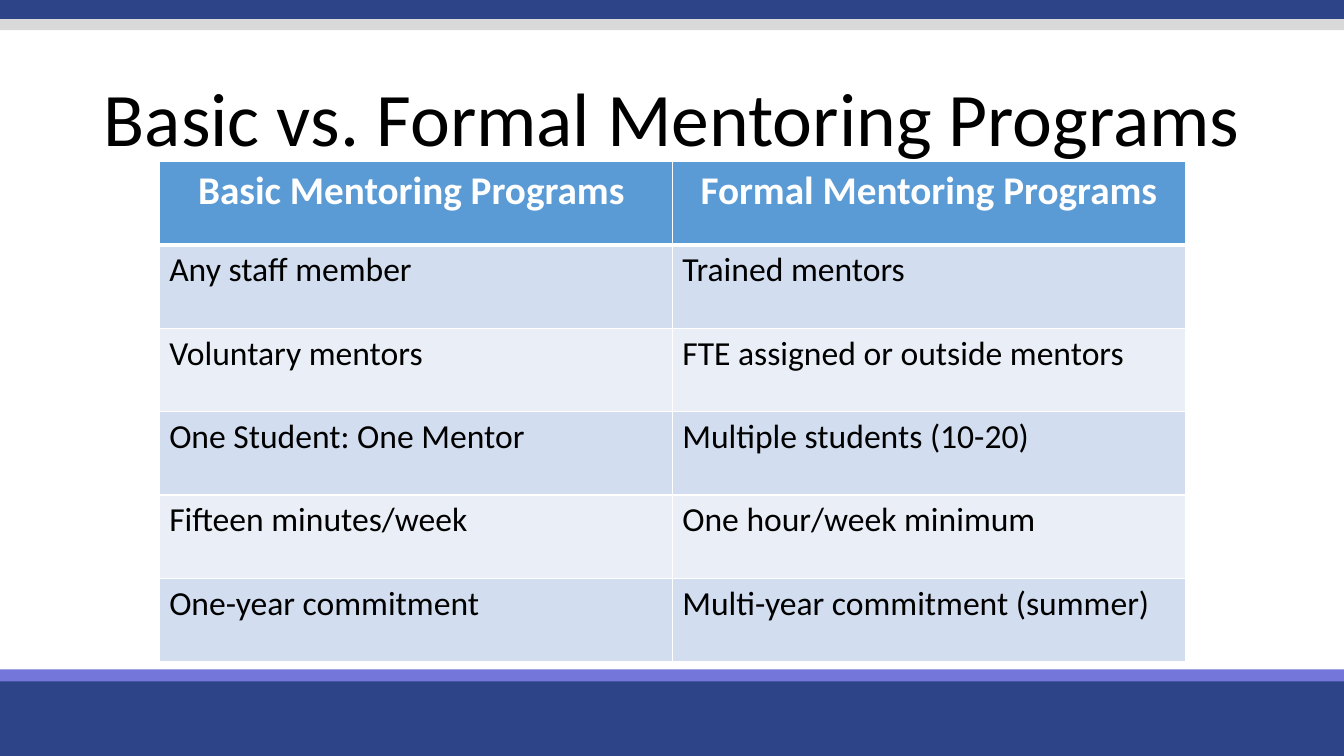
from pptx import Presentation
from pptx.dml.color import RGBColor as RGB
from pptx.enum.shapes import MSO_SHAPE as Shape
from pptx.enum.text import MSO_ANCHOR as Anchor, MSO_AUTO_SIZE as Auto, PP_ALIGN as Align
from pptx.oxml import parse_xml
from pptx.oxml.ns import nsdecls
from pptx.util import Pt

WIDE, HIGH = 960, 540
HUES = {
    "navy": "2E4488", "violet": "7476DA", "gray": "D9D9D9",
    "head": "5B9BD5", "dark": "D2DEEF", "light": "EAEFF7",
    "white": "FFFFFF", "black": "000000",
}
BARS = [
    (482.4, 57.6, "navy"),
    (478.1, 8.6, "violet"),
    (-2.2, 15.9, "navy"),
    (13.7, 7.9, "gray"),
]
ROWS = [
    ("Basic Mentoring Programs ", "Formal Mentoring Programs"),
    ("Any staff member", "Trained mentors"),
    ("Voluntary mentors", "FTE assigned or outside mentors"),
    ("One Student: One Mentor", "Multiple students (10-20)"),
    ("Fifteen minutes/week", "One hour/week minimum"),
    ("One-year commitment", "Multi-year commitment (summer)"),
]


class Board:
    def __init__(self, slide, face="Calibri"):
        self.slide = slide
        self.face = face

    def paint(self, fill, hue):
        fill.solid()
        fill.fore_color.rgb = RGB.from_string(HUES[hue])

    def label(self, frame, text, size, hue="black", bold=False, align=Align.LEFT):
        frame.text = text
        para = frame.paragraphs[0]
        para.alignment = align
        for run in para.runs:
            font = run.font
            font.name, font.size, font.bold = self.face, Pt(size), bold
            font.color.rgb = RGB.from_string(HUES[hue])
        return para

    def bar(self, top, high, hue):
        bar = self.slide.shapes.add_shape(
            Shape.RECTANGLE, 0, Pt(top), Pt(WIDE), Pt(high))
        bar.shadow.inherit = False
        self.paint(bar.fill, hue)
        bar.line.fill.background()

    def title(self, text, top, high, size):
        box = self.slide.shapes.title
        box.left, box.top, box.width, box.height = 0, Pt(top), Pt(WIDE), Pt(high)
        frame = box.text_frame
        frame.word_wrap = True
        frame.auto_size = Auto.NONE
        frame.vertical_anchor = Anchor.MIDDLE
        self.label(frame, text, size, align=Align.CENTER).line_spacing = 0.9

    def edge(self, cell, side, width):
        cell._tc.get_or_add_tcPr().append(parse_xml(
            f'<a:ln{side} {nsdecls("a")} w="{Pt(width)}"><a:solidFill>'
            f'<a:srgbClr val="{HUES["white"]}"/></a:solidFill></a:ln{side}>'))

    def table(self, rows, left, top, wide, high):
        grid = self.slide.shapes.add_table(
            len(rows), len(rows[0]), Pt(left), Pt(top), Pt(wide), Pt(high)).table
        for row, texts in enumerate(rows):
            for col, text in enumerate(texts):
                cell = grid.cell(row, col)
                # The rule under the header is shared by the first two rows.
                for side in "LRTB":
                    thick = (row, side) in ((0, "B"), (1, "T"))
                    self.edge(cell, side, 3 if thick else 1)
                if row == 0:
                    self.paint(cell.fill, "head")
                    self.label(cell.text_frame, text, 28, "white", True, Align.CENTER)
                else:
                    self.paint(cell.fill, "dark" if row % 2 else "light")
                    self.label(cell.text_frame, text, 24)


def main():
    deck = Presentation()
    deck.slide_width, deck.slide_height = Pt(WIDE), Pt(HIGH)
    board = Board(deck.slides.add_slide(deck.slide_layouts[5]))
    for bar in BARS:
        board.bar(*bar)
    board.title("Basic vs. Formal Mentoring Programs", 49.7, 75.6, 54)
    board.table(ROWS, 113.7, 115.5, 733, 357)
    deck.save("out.pptx")


if __name__ == "__main__":
    main()
